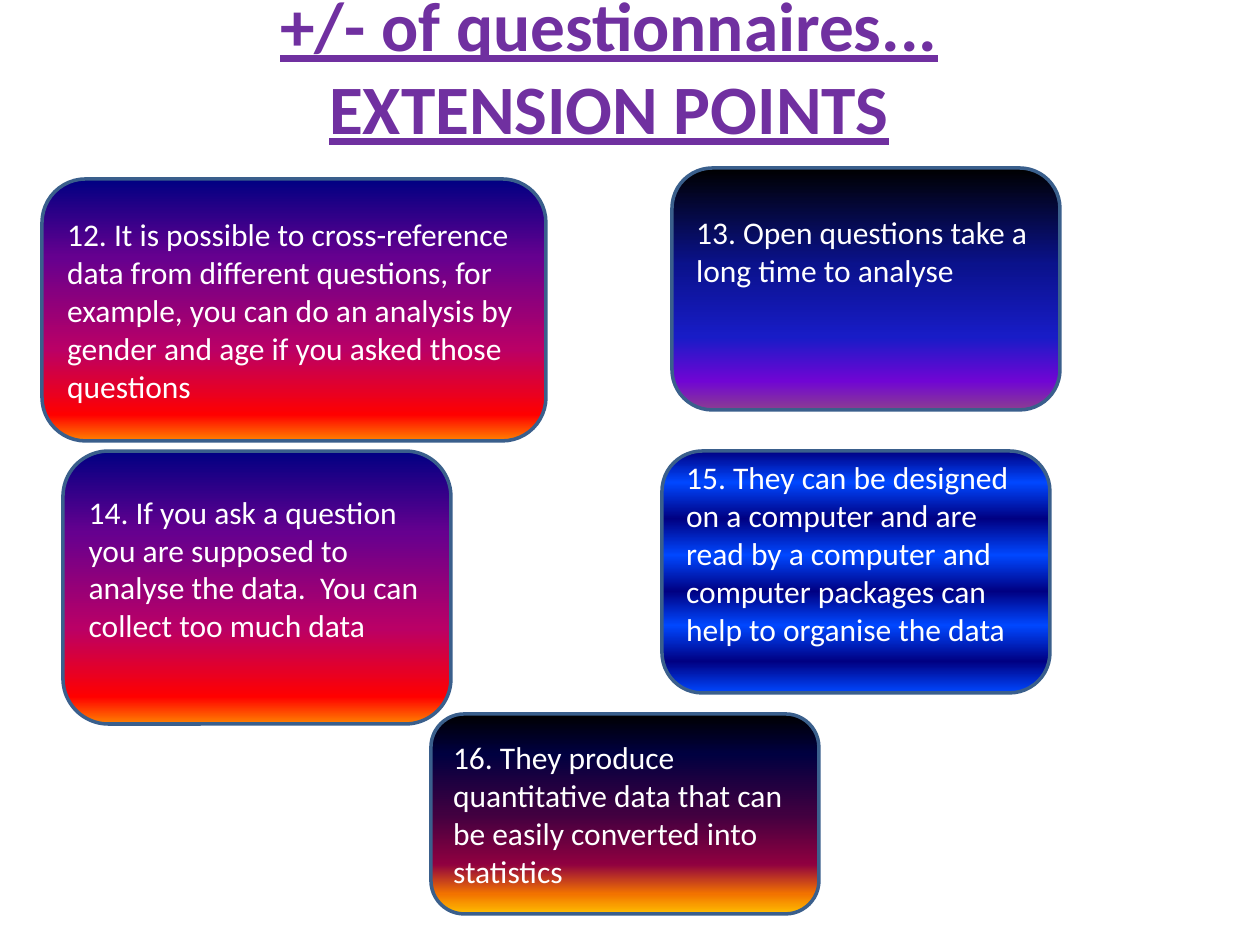
import copy
from dataclasses import dataclass

import pptx
import pptx.dml.color
import pptx.enum.dml
import pptx.enum.shapes
import pptx.enum.text
import pptx.oxml.ns
import pptx.util
from lxml import etree

PX = pptx.util.Inches(1) / 126
FONT = "Calibri"
BODY_PT = 18
BLANK_LINE = 38  # px height of one line of body text

COLORS = {"title": "7030A0", "outline": "3A5F8C", "text": "FFFFFF"}

# Gradient stops from top to bottom: (percent, colour)
GRADIENTS = {
    "fire": [(0, "000082"), (30, "66008F"), (65, "BA0066"), (90, "FF0000"),
             (100, "FF8200")],
    "sunset": [(0, "000000"), (20, "000040"), (50, "400040"), (75, "8F0040"),
               (90, "F27300"), (100, "FFBF00")],
    "night": [(0, "000000"), (40, "0A128C"), (70, "181CC7"), (88, "7005D4"),
              (100, "8C3D91")],
    "waves": [(pos, ("000082", "0047FF")[i % 2])
              for i, pos in enumerate((0, 13, 28, 43, 58, 72, 87, 100))],
}


@dataclass
class Point:
    left: int
    top: int
    width: int
    height: int
    gradient: str
    text: str
    lines_below: int = 0


POINTS = [
    Point(431, 714, 388, 200, "sunset",
          "16. They produce quantitative data that can be easily converted "
          "into statistics"),
    Point(662, 451, 388, 242, "waves",
          "15. They can be designed on a computer and are read by a computer "
          "and computer packages can help to organise the data", 1),
    Point(42, 179, 504, 262, "fire",
          "12. It is possible to cross-reference data from different questions, "
          "for example, you can do an analysis by gender and age if you asked "
          "those questions"),
    Point(672, 168, 388, 242, "night",
          "13. Open questions take a long time to analyse", 2),
    Point(63, 451, 388, 273, "fire",
          "14. If you ask a question you are supposed to analyse the data.  "
          "You can collect too much data", 1),
]


def px(n: int) -> int:
    return round(n * PX)


def rgb(name: str) -> pptx.dml.color.RGBColor:
    return pptx.dml.color.RGBColor.from_string(COLORS[name])


def style_run(r, size: float, color: str) -> None:
    r.font.name = FONT
    r.font.size = pptx.util.Pt(size)
    r.font.color.rgb = rgb(color)


def fill_gradient(sp, stops: list[tuple[int, str]]) -> None:
    """Fill the shape with the stops, running downwards."""
    sp.fill.gradient()
    sp.fill.gradient_angle = 270
    qn = pptx.oxml.ns.qn
    stop_list = next(sp._element.spPr.iter(qn("a:gsLst")))
    for old in list(stop_list):
        stop_list.remove(old)
    for pos, color in stops:
        gs = etree.SubElement(stop_list, qn("a:gs"), pos=str(pos * 1000))
        etree.SubElement(gs, qn("a:srgbClr"), val=color)


def set_title(s) -> None:
    title = s.shapes.title
    title.left, title.top = px(42), px(32)
    title.width, title.height = px(1134), px(67)
    tf = title.text_frame
    tf.auto_size = pptx.enum.text.MSO_AUTO_SIZE.NONE
    tf.vertical_anchor = pptx.enum.text.MSO_ANCHOR.MIDDLE
    tf.text = "+/- of questionnaires...\vEXTENSION POINTS"
    p = tf.paragraphs[0]
    p.alignment = pptx.enum.text.PP_ALIGN.CENTER
    for r in p.runs:
        style_run(r, 39.6, "title")
        r.font.bold = True
        r.font.underline = True
    # The line break takes the size of the text around it
    line_break = p._p.find(pptx.oxml.ns.qn("a:br"))
    line_break.append(copy.deepcopy(p.runs[0]._r.rPr))


def add_point(s, point: Point) -> None:
    sp = s.shapes.add_shape(
        pptx.enum.shapes.MSO_SHAPE.ROUNDED_RECTANGLE,
        px(point.left), px(point.top), px(point.width), px(point.height))
    sp.shadow.inherit = False
    fill_gradient(sp, GRADIENTS[point.gradient])
    sp.line.color.rgb = rgb("outline")
    sp.line.width = pptx.util.Pt(2)
    tf = sp.text_frame
    tf.word_wrap = True
    tf.vertical_anchor = pptx.enum.text.MSO_ANCHOR.MIDDLE
    tf.margin_bottom += px(point.lines_below * BLANK_LINE)
    tf.text = point.text
    p = tf.paragraphs[0]
    p.alignment = pptx.enum.text.PP_ALIGN.LEFT
    style_run(p.runs[0], BODY_PT, "text")


def main() -> None:
    prs = pptx.Presentation()
    prs.slide_width, prs.slide_height = px(1260), px(945)
    s = prs.slides.add_slide(prs.slide_layouts[5])
    set_title(s)
    for point in POINTS:
        add_point(s, point)
    prs.save("out.pptx")


if __name__ == "__main__":
    main()
